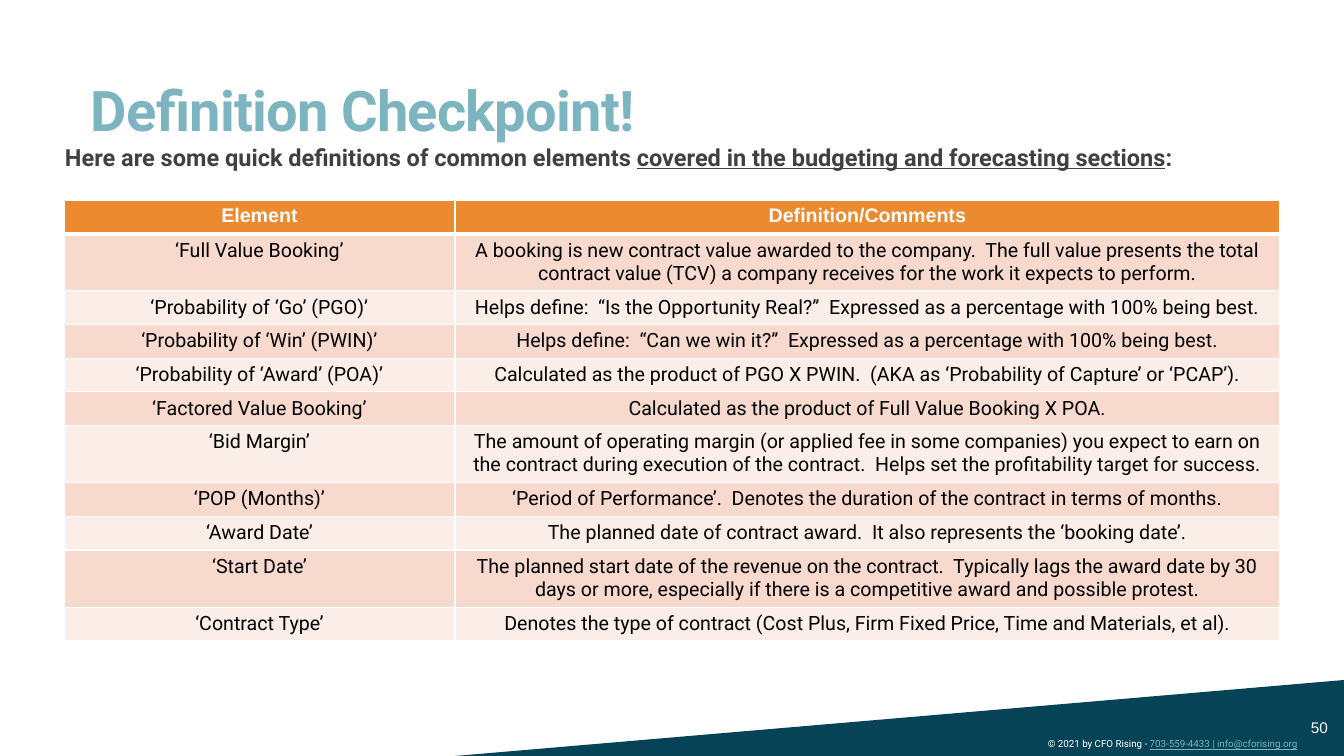
"""Builds the definition checkpoint slide with its table of booking terms."""
import pptx
import pptx.dml.color
import pptx.enum.shapes
import pptx.enum.text
import pptx.oxml
import pptx.oxml.ns
import pptx.util

PX = 914400 / 100.8
WHITE, TEAL, NAVY, GRAY = "FFFFFF", "7CB4C0", "074356", "404040"
HEADER_FILL, BAND_FILLS = "EB8A2F", ("F7DACD", "FBEDE8")

LABEL = {"name": "Roboto", "size": 7, "color": WHITE}
LEAD = {"name": "Roboto", "size": 16.8, "color": GRAY, "bold": True}
TITLE = {"name": "Roboto", "size": 40, "color": TEAL, "bold": True}
NUMBER = {"name": "Arial", "size": 11, "color": WHITE}
HEADER = {"name": "Arial", "size": 14, "color": WHITE, "bold": True}
BODY = {"name": "Roboto", "size": 14, "color": "000000", "bold": False}

TOP, MIDDLE, BOTTOM = (pptx.enum.text.MSO_ANCHOR.TOP, pptx.enum.text.MSO_ANCHOR.MIDDLE,
                       pptx.enum.text.MSO_ANCHOR.BOTTOM)
TRIANGLE = (455, 680, 889, 76)
TEXTS = [
    ((1038, 733, 300, 23), TOP, 1, [
        ("© 2021\u00a0by CFO Rising - ", LABEL),
        ("703-559-4433 |\u00a0info@cforising.org", {**LABEL, "color": TEAL, "underline": True})]),
    ((81, 56, 1124, 92), BOTTOM, 0.85, [("Definition Checkpoint!", TITLE)]),
    ((1301, 707, 43, 40), MIDDLE, 1, [("50", NUMBER)]),
    ((55, 143, 1234, 60), TOP, 0.8, [
        ("Here are some quick definitions of common elements ", LEAD),
        ("covered in the budgeting and forecasting sections", {**LEAD, "underline": True}),
        (":", LEAD)]),
]

TABLE_LEFT, TABLE_TOP = 64, 200
COLUMN_WIDTHS = (391, 825)
LINE_HEIGHT, CELL_PADDING = 23, 10
ROWS = [
    (1, "Element", "Definition/Comments"),
    (2, "‘Full Value Booking’",
     "A booking is new contract value awarded to the company.  The full value presents the total "
     "contract value (TCV) a company receives for the work it expects to perform."),
    (1, "‘Probability of ‘Go’ (PGO)’",
     "Helps define:  “Is the Opportunity Real?”  Expressed as a percentage with 100% being best."),
    (1, "‘Probability of ‘Win’ (PWIN)’",
     "Helps define:  “Can we win it?”  Expressed as a percentage with 100% being best."),
    (1, "‘Probability of ‘Award’ (POA)’",
     "Calculated as the product of PGO X PWIN.  (AKA as ‘Probability of Capture’ or ‘PCAP’)."),
    (1, "‘Factored Value Booking’", "Calculated as the product of Full Value Booking X POA."),
    (2, "‘Bid Margin’",
     "The amount of operating margin (or applied fee in some companies) you expect to earn on "
     "the contract during execution of the contract.  Helps set the profitability target for success."),
    (1, "‘POP (Months)’",
     "‘Period of Performance’.  Denotes the duration of the contract in terms of months."),
    (1, "‘Award Date’",
     "The planned date of contract award.  It also represents the ‘booking date’."),
    (2, "‘Start Date’",
     "The planned start date of the revenue on the contract.  Typically lags the award date by 30 "
     "days or more, especially if there is a competitive award and possible protest."),
    (1, "‘Contract Type’",
     "Denotes the type of contract (Cost Plus, Firm Fixed Price, Time and Materials, et al)."),
]


def emu(*lengths):
    return [round(length * PX) for length in lengths]


def rgb(value):
    return pptx.dml.color.RGBColor.from_string(value)


def add_span(para, text, look):
    span = para.add_run()
    span.text = text
    for name, value in look.items():
        if name == "color":
            span.font.color.rgb = rgb(value)
        else:
            setattr(span.font, name, pptx.util.Pt(value) if name == "size" else value)
    return span


def add_text(page, place, anchor, spacing, spans):
    frame = page.shapes.add_textbox(*emu(*place)).text_frame
    frame.word_wrap = True
    frame.vertical_anchor = anchor
    para = frame.paragraphs[0]
    para.line_spacing = spacing
    for text, look in spans:
        span = add_span(para, text, look)
        if look is TITLE:
            span.font._element.set("spc", "-50")


def add_triangle(page):
    shape = page.shapes.add_shape(pptx.enum.shapes.MSO_SHAPE.RIGHT_TRIANGLE, *emu(*TRIANGLE))
    shape.shadow.inherit = False
    shape.fill.solid()
    shape.fill.fore_color.rgb = rgb(NAVY)
    shape.line.fill.background()
    shape._element.spPr.find(pptx.oxml.ns.qn("a:xfrm")).set("flipH", "1")


def add_borders(cell, bottom):
    for side, points in {"L": 1, "R": 1, "T": 1, "B": bottom}.items():
        cell._tc.get_or_add_tcPr().append(pptx.oxml.parse_xml(
            f'<a:ln{side} {pptx.oxml.ns.nsdecls("a")} w="{pptx.util.Pt(points)}">'
            f'<a:solidFill><a:srgbClr val="{WHITE}"/></a:solidFill></a:ln{side}>'))


def add_definitions(page):
    heights = [lines * LINE_HEIGHT + CELL_PADDING for lines, *_ in ROWS]
    place = emu(TABLE_LEFT, TABLE_TOP, sum(COLUMN_WIDTHS), sum(heights))
    table = page.shapes.add_table(len(ROWS), len(COLUMN_WIDTHS), *place).table
    for column, width in zip(table.columns, emu(*COLUMN_WIDTHS)):
        column.width = width
    for row, height in zip(table.rows, emu(*heights)):
        row.height = height
    for row_index, (_, *texts) in enumerate(ROWS):
        is_header = row_index == 0
        fill = HEADER_FILL if is_header else BAND_FILLS[(row_index - 1) % 2]
        for column_index, text in enumerate(texts):
            cell = table.cell(row_index, column_index)
            add_borders(cell, 3 if is_header else 1)
            cell.fill.solid()
            cell.fill.fore_color.rgb = rgb(fill)
            para = cell.text_frame.paragraphs[0]
            para.alignment = pptx.enum.text.PP_ALIGN.CENTER
            add_span(para, text, HEADER if is_header else BODY)


def main():
    deck = pptx.Presentation()
    deck.slide_width, deck.slide_height = emu(1344, 756)
    page = deck.slides.add_slide(deck.slide_layouts[6])
    add_triangle(page)
    for item in TEXTS:
        add_text(page, *item)
    add_definitions(page)
    deck.save("out.pptx")


if __name__ == "__main__":
    main()
